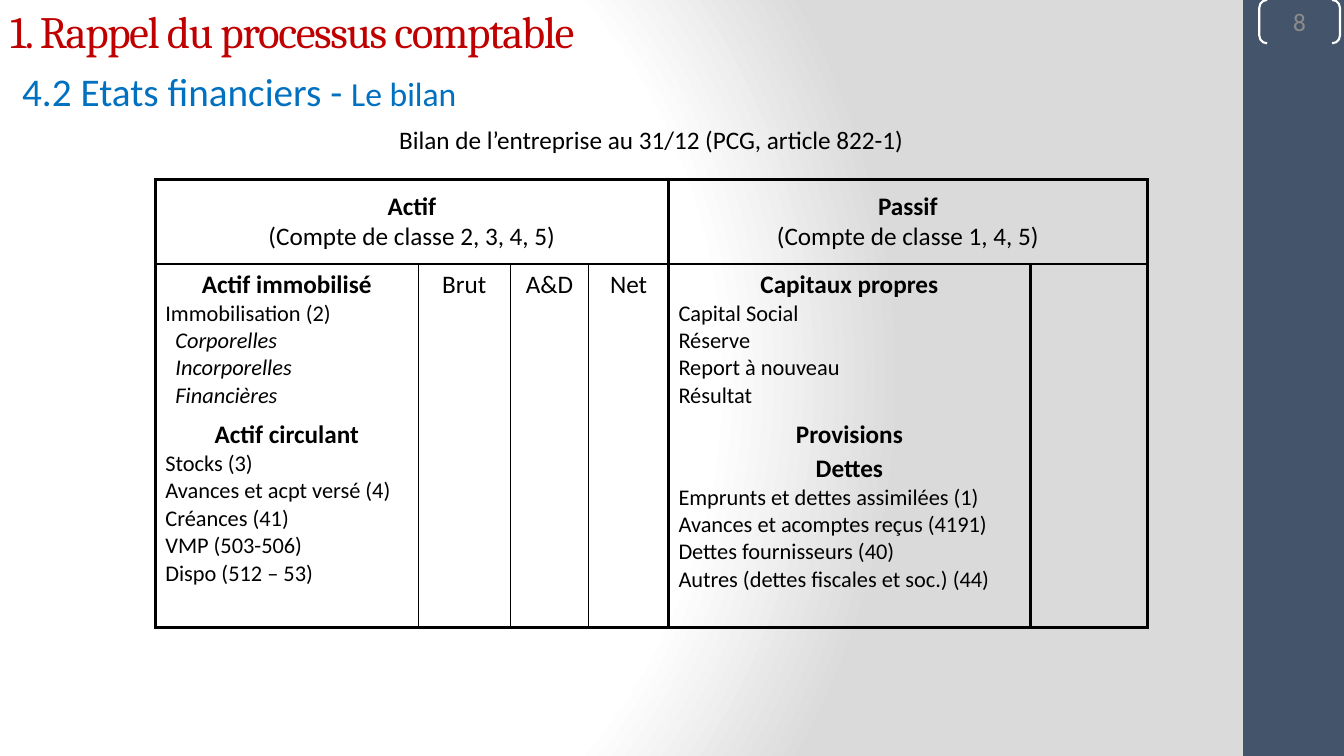
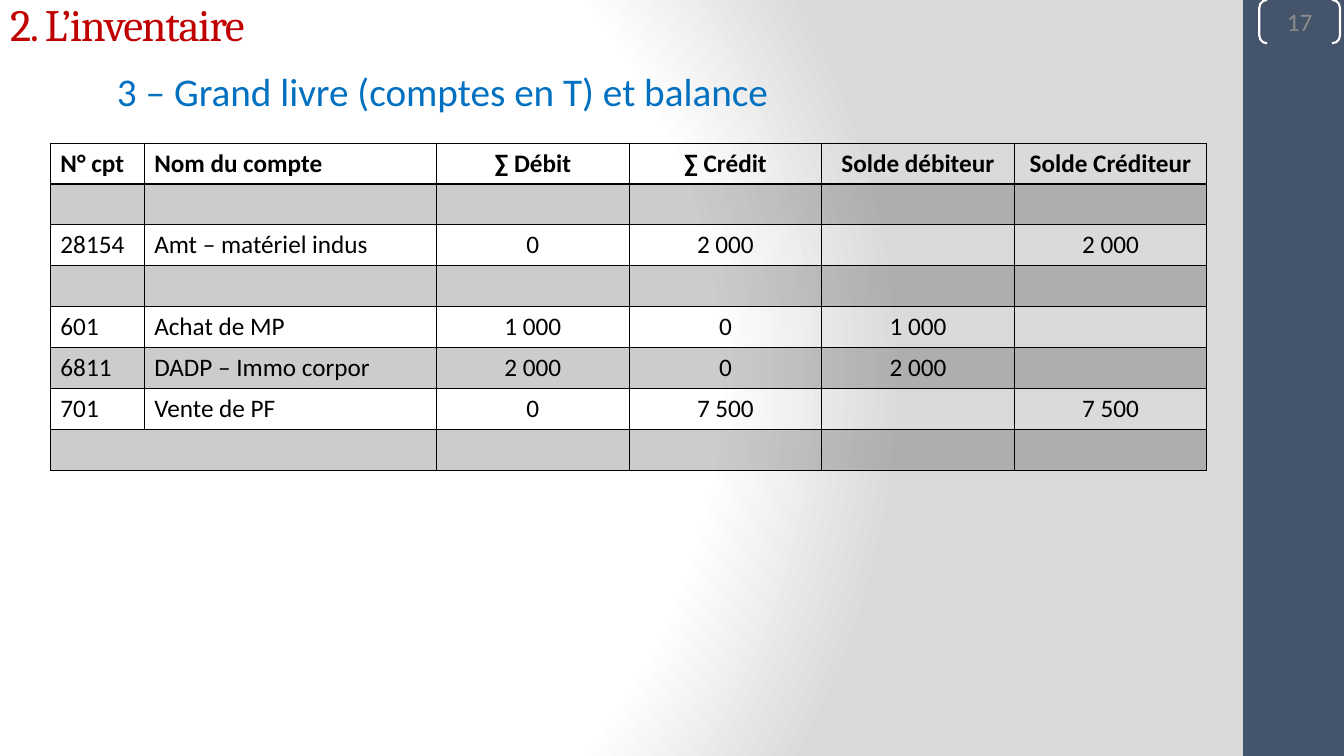
from lxml.etree import SubElement
from pptx import Presentation
from pptx.dml.color import RGBColor
from pptx.enum.shapes import MSO_SHAPE
from pptx.enum.text import MSO_ANCHOR, MSO_AUTO_SIZE, PP_ALIGN
from pptx.oxml import parse_xml
from pptx.oxml.ns import nsdecls, qn
from pptx.util import Inches, Pt

COLORS = {
    "title": "C00000",
    "subtitle": "0070C0",
    "text": "000000",
    "number": "8C8C8C",
    "sidebar": "44546A",
    "light": "FFFFFF",
    "shade": "DADADA",
}
BODY_FONT, TITLE_FONT = "Calibri", "Cambria"
PLAIN_TABLE_STYLE = "{2D5ABB26-0587-4C30-8999-92F81FD0307C}"
SIDEBAR_LEFT = 12.33


def color(name):
    return RGBColor.from_string(COLORS[name])


def add_text(frame, text, *, size=18, font=BODY_FONT, fill="text", bold=False,
             italic=False, align=PP_ALIGN.LEFT, indent=0, before=0,
             spacing=None, same_line=False):
    """Write a paragraph, or a run on the last line."""
    paragraph = frame.paragraphs[-1]
    if not same_line:
        if paragraph.runs:
            paragraph = frame.add_paragraph()
        properties = paragraph._p.get_or_add_pPr()
        properties.set("marL", str(Inches(indent)))
        properties.set("indent", "0")
        SubElement(properties, qn("a:buNone"))
        paragraph.alignment = align
        paragraph.space_before = Pt(before)
    run = paragraph.add_run()
    run.text = text
    run.font.name = font
    run.font.size = Pt(size)
    run.font.bold = bold
    run.font.italic = italic
    run.font.color.rgb = color(fill)
    if spacing is not None:
        run._r.get_or_add_rPr().set("spc", str(spacing))


def place(shape, left, top, width, height, anchor):
    shape.left, shape.top = Inches(left), Inches(top)
    shape.width, shape.height = Inches(width), Inches(height)
    frame = shape.text_frame
    frame.word_wrap = True
    frame.auto_size = MSO_AUTO_SIZE.NONE
    frame.vertical_anchor = anchor
    return frame


# Shared background and frame
def set_background(master):
    stops = "".join(
        f'<a:gs pos="{position}000"><a:srgbClr val="{COLORS[name]}"/></a:gs>'
        for position, name in ((0, "light"), (75, "light"), (100, "shade")))
    background = parse_xml(
        f'<p:bg {nsdecls("p", "a")}><p:bgPr><a:gradFill rotWithShape="1">'
        f'<a:gsLst>{stops}</a:gsLst><a:path path="circle">'
        '<a:fillToRect l="20000" t="50000" r="100000" b="50000"/></a:path>'
        '</a:gradFill><a:effectLst/></p:bgPr></p:bg>')
    content = master.element.cSld
    for old in content.findall(qn("p:bg")):
        content.remove(old)
    content.insert(0, background)


def add_sidebar(slide, number, left=SIDEBAR_LEFT):
    sidebar = slide.shapes.add_shape(
        MSO_SHAPE.RECTANGLE, Inches(left), 0, Inches(1), Inches(7.5))
    sidebar.shadow.inherit = False
    sidebar.fill.solid()
    sidebar.fill.fore_color.rgb = color("sidebar")
    sidebar.line.fill.background()

    # Page number in brackets
    bracket = slide.shapes.add_shape(
        MSO_SHAPE.DOUBLE_BRACKET, Inches(left + 0.16), 0, Inches(0.8), Inches(0.43))
    bracket.adjustments[0] = 0.18
    bracket.shadow.inherit = False
    bracket.fill.background()
    bracket.line.color.rgb = color("light")
    bracket.line.width = Pt(1.5)
    frame = bracket.text_frame
    frame.margin_left = frame.margin_right = 0
    frame.margin_top = frame.margin_bottom = 0
    frame.vertical_anchor = MSO_ANCHOR.MIDDLE
    add_text(frame, str(number), fill="number", align=PP_ALIGN.CENTER)


def add_slide(presentation, number, title, title_top, subtitle, subtitle_left):
    """Add a slide; subtitle is a list of (text, size) on one line."""
    slide = presentation.slides.add_slide(presentation.slide_layouts[1])
    add_sidebar(slide, number)
    title_frame = place(slide.shapes.title, 0, title_top, 11.2, 0.63,
                        MSO_ANCHOR.MIDDLE)
    add_text(title_frame, title, size=32, font=TITLE_FONT, fill="title",
             spacing=-100)
    body_frame = place(slide.placeholders[1], subtitle_left, 0.62, 10.6, 0.57,
                       MSO_ANCHOR.TOP)
    for index, (text, size) in enumerate(subtitle):
        add_text(body_frame, text, size=size, fill="subtitle", indent=0.12,
                 same_line=index > 0)
    return slide


# Table helpers
def add_plain_table(slide, left, top, widths, heights):
    table = slide.shapes.add_table(
        len(heights), len(widths), Inches(left), Inches(top),
        Inches(sum(widths)), Inches(sum(heights))).table
    table.first_row = table.horz_banding = False
    table._tbl.tblPr.find(qn("a:tableStyleId")).text = PLAIN_TABLE_STYLE
    for column, width in zip(table.columns, widths):
        column.width = Inches(width)
    for row, height in zip(table.rows, heights):
        row.height = Inches(height)
    for cell in table.iter_cells():
        cell.fill.background()
    return table


def set_borders(cell, left=0, right=0, top=0, bottom=0):
    """Draw the cell sides, with widths in points; 0 draws none."""
    properties = cell._tc.get_or_add_tcPr()
    sides = (("lnL", left), ("lnR", right), ("lnT", top), ("lnB", bottom))
    for position, (tag, width) in enumerate(sides):
        paint = (f'<a:solidFill><a:srgbClr val="{COLORS["text"]}"/></a:solidFill>'
                 if width else "<a:noFill/>")
        properties.insert(position, parse_xml(
            f'<a:{tag} {nsdecls("a")} w="{Pt(width)}">{paint}</a:{tag}>'))


def shade_cell(cell, opacity):
    cell.fill.solid()
    cell.fill.fore_color.rgb = color("text")
    fill = cell._tc.tcPr.find(qn("a:solidFill"))
    SubElement(fill[0], qn("a:alpha")).set("val", str(opacity * 1000))


# Balance sheet
def add_balance_sheet(slide, left, top):
    table = add_plain_table(slide, left, top,
                            [2.61, 0.91, 0.78, 0.79, 3.59, 1.16],
                            [0.59, 0.84, 1.48, 2.11])
    verticals = [2.25, 1, 1, 1, 3, 2.25, 2.25]
    horizontals = [0, 2.25, 2.25, 0, 2.25]
    spans = [[(0, 6)], [(0, 4), (4, 6)]] + [[(c, c + 1) for c in range(6)]] * 2
    for row, row_spans in enumerate(spans):
        for start, stop in row_spans:
            cell = table.cell(row, start)
            if stop - start > 1:
                cell.merge(table.cell(row, stop - 1))
            set_borders(cell, verticals[start] if row else 0,
                        verticals[stop] if row else 0,
                        horizontals[row], horizontals[row + 1])

    # Caption and the two headings
    center = PP_ALIGN.CENTER
    add_text(table.cell(0, 0).text_frame,
             "Bilan de l’entreprise au 31/12 (PCG, article 822-1)", align=center)
    for column, heading, classes in ((0, "Actif", "2, 3, 4, 5"),
                                     (4, "Passif", "1, 4, 5")):
        cell = table.cell(1, column)
        cell.vertical_anchor = MSO_ANCHOR.MIDDLE
        add_text(cell.text_frame, heading, bold=True, align=center)
        add_text(cell.text_frame, f"(Compte de classe {classes})", align=center)
    for column, label in enumerate(("Brut", "A&D", "Net"), 1):
        add_text(table.cell(2, column).text_frame, label, align=center)

    # Sections: headings, then entries, then sub-entries
    sections = [
        (2, 0, ["Actif immobilisé"], ["Immobilisation (2)"],
         ["Corporelles", "Incorporelles", "Financières"]),
        (2, 4, ["Capitaux propres"],
         ["Capital Social", "Réserve", "Report à nouveau", "Résultat"], []),
        (3, 0, ["Actif circulant"],
         ["Stocks (3)", "Avances et acpt versé (4)", "Créances (41)",
          "VMP (503-506)", "Dispo (512 – 53)"], []),
        (3, 4, ["Provisions", "Dettes"],
         ["Emprunts et dettes assimilées (1)", "Avances et acomptes reçus (4191)",
          "Dettes fournisseurs (40)", "Autres (dettes fiscales et soc.) (44)"], []),
    ]
    for row, column, headings, entries, details in sections:
        frame = table.cell(row, column).text_frame
        for index, heading in enumerate(headings):
            add_text(frame, heading, bold=True, align=center, before=2 * index)
        for entry in entries:
            add_text(frame, entry, size=16)
        for detail in details:
            add_text(frame, detail, size=16, italic=True, indent=0.1)


# Trial balance
def add_trial_balance(slide, left, top):
    rows = [
        ["N° cpt", "Nom du compte", "∑ Débit", "∑ Crédit",
         "Solde débiteur", "Solde Créditeur"],
        [""] * 6,
        ["28154", "Amt – matériel indus", "0", "2 000", "", "2 000"],
        [""] * 6,
        ["601", "Achat de MP", "1 000", "0", "1 000", ""],
        ["6811", "DADP – Immo corpor", "2 000", "0", "2 000", ""],
        ["701", "Vente de PF", "0", "7 500", "", "7 500"],
        [""] * 6,
    ]
    table = add_plain_table(slide, left, top, [0.93, 2.9] + [1.91] * 4,
                            [3.24 / len(rows)] * len(rows))
    last = len(rows) - 1
    table.cell(last, 0).merge(table.cell(last, 1))
    for row, texts in enumerate(rows):
        for column, text in enumerate(texts):
            cell = table.cell(row, column)
            if cell.is_spanned:
                continue
            if row % 2:
                shade_cell(cell, 20)
            set_borders(cell, 1, 1, top=2 if row == 1 else 1,
                        bottom=2 if row == 0 else 1)
            if text:
                add_text(cell.text_frame, text, bold=row == 0,
                         align=PP_ALIGN.CENTER if column > 1 else PP_ALIGN.LEFT)


def main():
    presentation = Presentation()
    presentation.slide_width = Inches(13.33)
    presentation.slide_height = Inches(7.5)
    set_background(presentation.slide_master)

    slide = add_slide(presentation, 8, "1. Rappel du processus comptable", -0.01,
                      [("4.2 Etats financiers - ", 28), ("Le bilan", 24)], 0)
    add_balance_sheet(slide, 1.54, 1.19)

    slide = add_slide(presentation, 17, "2. L’inventaire", -0.08,
                      [("3 – Grand livre (comptes en T) et balance", 28)], 0.94)
    add_trial_balance(slide, 0.5, 1.42)

    presentation.save("out.pptx")


if __name__ == "__main__":
    main()
